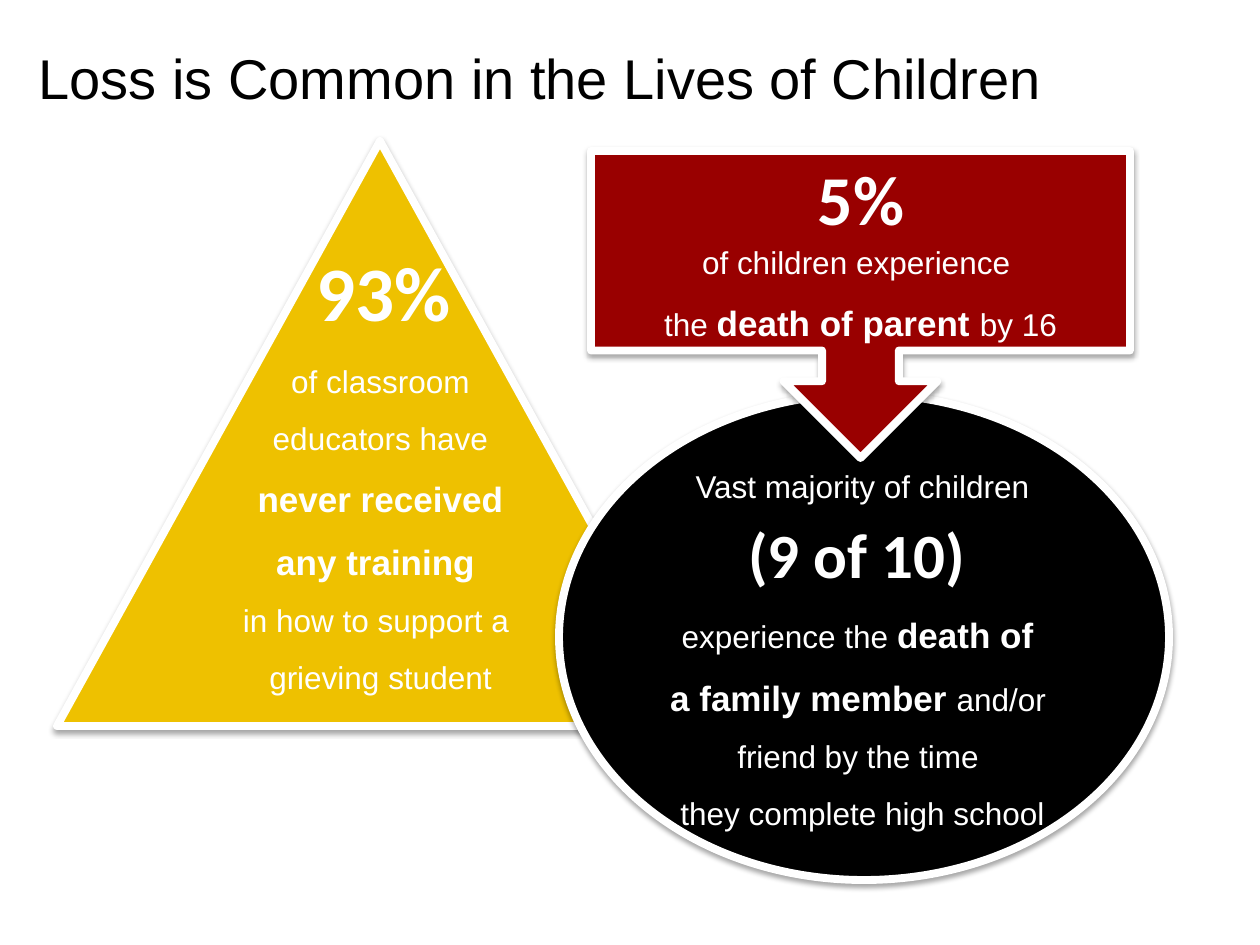
from lxml import etree
from pptx import Presentation
from pptx.dml.color import RGBColor
from pptx.enum.shapes import MSO_SHAPE as Shape
from pptx.enum.text import MSO_ANCHOR as Anchor, MSO_AUTO_SIZE as AutoSize, PP_ALIGN as Align
from pptx.oxml import parse_xml
from pptx.util import Emu, Pt

PX = 914400 / 126
GOLD = RGBColor(0xEE, 0xC1, 0x00)
RED = RGBColor(0x99, 0x00, 0x00)
BLACK = RGBColor(0x00, 0x00, 0x00)
WHITE = RGBColor(0xFF, 0xFF, 0xFF)
SHADOW = (
    '<a:effectLst xmlns:a="http://schemas.openxmlformats.org/drawingml/2006/main">'
    '<a:outerShdw blurRad="39370" dist="22860" dir="5400000" rotWithShape="0">'
    '<a:srgbClr val="000000"><a:alpha val="35000"/></a:srgbClr>'
    '</a:outerShdw></a:effectLst>'
)


def px(*values):
    return [Emu(round(value * PX)) for value in values]


def add_figure(page, kind, place, color):
    figure = page.shapes.add_shape(kind, *px(*place))
    figure.fill.solid()
    figure.fill.fore_color.rgb = color
    figure.line.color.rgb = WHITE
    figure.line.width = Pt(4.5)
    figure.shadow.inherit = False
    properties = figure.fill._xPr
    properties.replace(properties.find("{*}effectLst"), parse_xml(SHADOW))


def add_span(para, text, size=18, bold=False, font="Arial", color=WHITE):
    for index, piece in enumerate(text.split("\n")):
        if index:
            para.add_line_break()
        if piece:
            span = para.add_run()
            span.text = piece
            span.font.size = Pt(size)
            span.font.bold = bold
            span.font.name = font
            span.font.color.rgb = color
    for line_break in para._p.findall("{*}br"):
        if line_break.find("{*}rPr") is None:
            namespace = etree.QName(line_break).namespace
            etree.SubElement(line_break, f"{{{namespace}}}rPr", sz=str(size * 100))


def add_box(page, place, paragraphs, spacing=1.5, gap=0):
    box = page.shapes.add_textbox(*px(*place))
    frame = box.text_frame
    frame.word_wrap = True
    frame.auto_size = AutoSize.SHAPE_TO_FIT_TEXT
    for index, spans in enumerate(paragraphs):
        para = frame.add_paragraph() if index else frame.paragraphs[0]
        para.alignment = Align.CENTER
        para.line_spacing = spacing
        if index:
            para.space_before = Pt(gap)
        for text, options in spans:
            add_span(para, text, **options)


def add_number(page, place, text, size):
    style = {"size": size, "bold": True, "font": "Calibri"}
    add_box(page, place, [[(text, style)]], spacing=1.0)


def set_title(page, text):
    title = page.shapes.title
    title.left, title.top, title.width, title.height = px(26, 29, 1077, 97)
    title.text_frame.vertical_anchor = Anchor.MIDDLE
    para = title.text_frame.paragraphs[0]
    para.alignment = Align.LEFT
    add_span(para, text, size=32, color=BLACK)


def main():
    deck = Presentation()
    deck.slide_width, deck.slide_height = px(1260, 945)
    page = deck.slides.add_slide(deck.slide_layouts[5])
    strong = {"size": 20, "bold": True}
    set_title(page, "Loss is Common in the Lives of Children")

    add_figure(page, Shape.FLOWCHART_EXTRACT, (57, 141, 646, 585), GOLD)
    add_box(page, (223, 337, 315, 365), [[
        ("of classroom educators have ", {}),
        ("never received any training \n", strong),
        ("in how to support a \ngrieving student", {}),
    ]])

    add_figure(page, Shape.OVAL, (559, 394, 610, 486), BLACK)
    add_box(page, (593, 442, 539, 393), [
        [("Vast majority of children", {})],
        [
            ("experience the ", {}),
            ("death of \na family member ", strong),
            ("and/or \nfriend by the time \nthey complete high school", {}),
        ],
    ], gap=50)
    add_number(page, (610, 509, 508, 89), "(9 of 10) ", 36)

    add_figure(page, Shape.DOWN_ARROW_CALLOUT, (591, 151, 539, 307), RED)
    add_number(page, (595, 149, 532, 97), "5%", 40)
    add_box(page, (591, 218, 539, 125), [[
        ("of children experience \nthe ", {}),
        ("death of parent ", strong),
        ("by 16", {}),
    ]])
    add_number(page, (118, 238, 532, 106), "93%", 44)
    deck.save("out.pptx")


if __name__ == "__main__":
    main()
